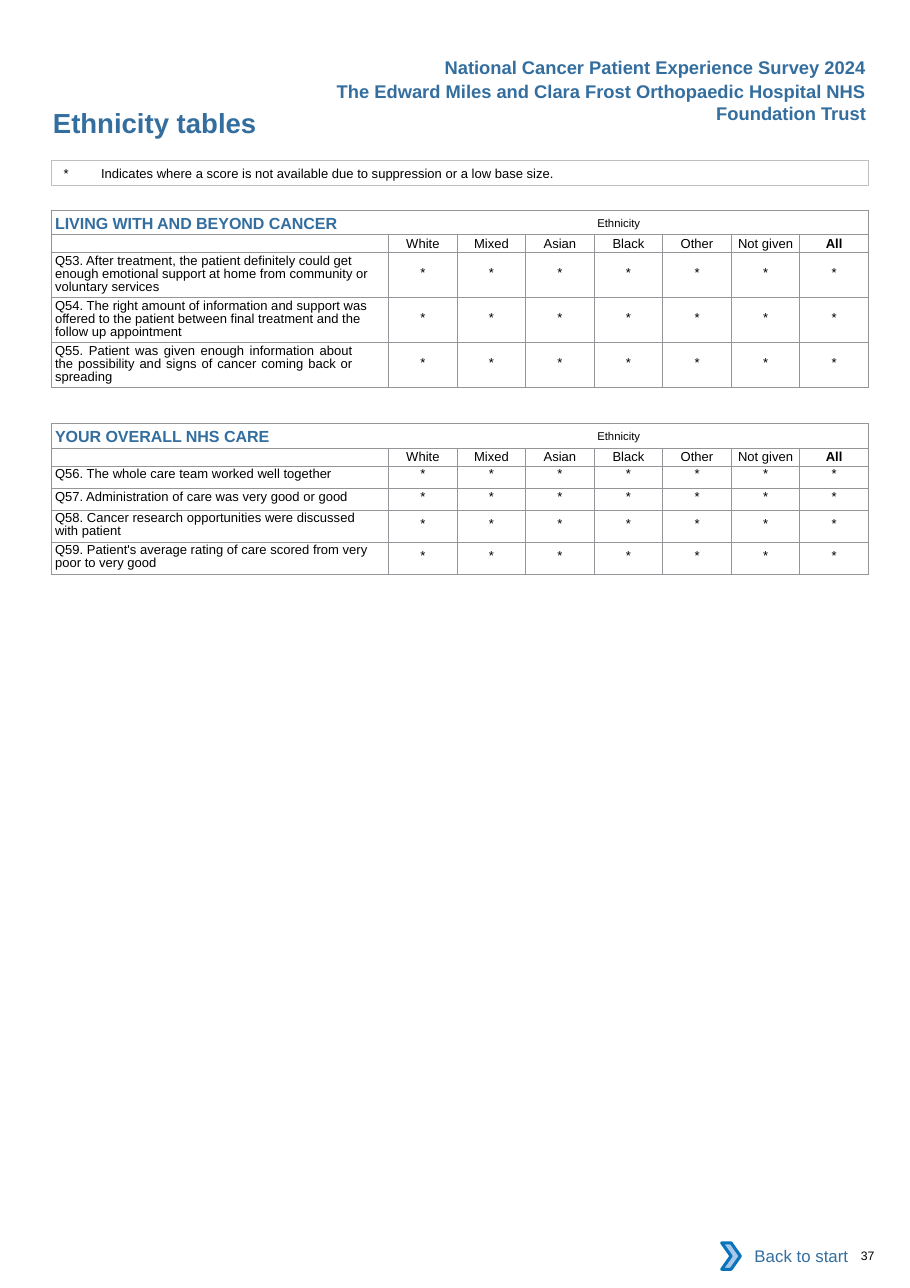
from lxml import etree
from pptx import Presentation
from pptx.dml.color import RGBColor
from pptx.enum import shapes, text
from pptx.oxml import ns
from pptx.util import Cm, Pt

BLUE, BLACK, GRID = "336E9F", "000000", "939598"
ALIGN, ANCHOR = text.PP_ALIGN, text.MSO_ANCHOR


def add_run(p, words, size, color=BLACK, bold=False):
    r = p.add_run()
    r.text = words
    r.font.name, r.font.size, r.font.bold = "Arial", Pt(size), bold
    r.font.color.rgb = RGBColor.from_string(color)
    return r


def set_frame(tf, left=0, top=0, right=0, bottom=0, anchor=ANCHOR.TOP):
    """Set the insets in cm and the anchor of a text frame or table cell."""
    tf.margin_left, tf.margin_top = Cm(left), Cm(top)
    tf.margin_right, tf.margin_bottom = Cm(right), Cm(bottom)
    tf.vertical_anchor = anchor
    tf.word_wrap = True


prs = Presentation()
prs.slide_width, prs.slide_height = Cm(20.98), Cm(29.69)
s = prs.slides.add_slide(prs.slide_layouts[5])

# Page number
sp = s.shapes.add_textbox(Cm(19.6), Cm(28.77), Cm(1.3), Cm(0.34))
set_frame(sp.text_frame, left=0.25)
add_run(sp.text_frame.paragraphs[0], "37", 8)

# Title
title = s.shapes.title
title.left, title.top, title.width, title.height = Cm(1.19), Cm(2.44), Cm(11.43), Cm(0.76)
tf = title.text_frame
set_frame(tf, left=0.03)
tf.auto_size = text.MSO_AUTO_SIZE.NONE
tf.paragraphs[0].alignment = ALIGN.LEFT
add_run(tf.paragraphs[0], "Ethnicity tables", 18, BLUE, True)

# Score tables: top, heading, then (question, row height, star inset, right inset)
GROUPS = ["White", "Mixed", "Asian", "Black", "Other", "Not given", "All"]
TABLES = [
    (4.85, "LIVING WITH AND BEYOND CANCER", [
        ("Q53. After treatment, the patient definitely could get enough emotional "
         "support at home from community or voluntary services", 1.04, 0.3, 0.3),
        ("Q54. The right amount of information and support was offered to the patient "
         "between final treatment and the follow up appointment", 1.04, 0.3, 0.3),
        ("Q55. Patient was given enough information about the possibility and signs of "
         "cancer coming back or spreading", 1.04, 0.3, 0.83),
    ]),
    (9.77, "YOUR OVERALL NHS CARE", [
        ("Q56. The whole care team worked well together", 0.51, 0.03, 0),
        ("Q57. Administration of care was very good or good", 0.51, 0.03, 0),
        ("Q58. Cancer research opportunities were discussed with patient", 0.74, 0.15, 0.7),
        ("Q59. Patient's average rating of care scored from very poor to very good",
         0.74, 0.15, 0.3),
    ]),
]
for top, heading, questions in TABLES:
    heights = [0.56, 0.41] + [q[1] for q in questions]
    frame = s.shapes.add_table(len(heights), len(GROUPS) + 1, Cm(1.19), Cm(top),
                               Cm(18.83), Cm(sum(heights)))
    table = frame.table
    table.first_row = table.horz_banding = False
    for i, column in enumerate(table.columns):
        column.width = Cm(1.58 if i else 7.77)
    for row, height in zip(table.rows, heights):
        row.height = Cm(height)
    table.cell(0, 0).merge(table.cell(0, len(GROUPS)))

    cell = table.cell(0, 0)
    set_frame(cell, left=0.08, anchor=ANCHOR.MIDDLE)
    p = cell.text_frame.paragraphs[0]
    add_run(p, heading + "\t", 10.5, BLUE, True)
    r = add_run(p, "Ethnicity", 12.8)
    r.font._element.set("baseline", "10000")
    tabs = etree.SubElement(p._p.get_or_add_pPr(), ns.qn("a:tabLst"))
    etree.SubElement(tabs, ns.qn("a:tab"), pos=str(Cm(12.5)), algn="l")

    for c, group in enumerate(GROUPS, 1):
        cell = table.cell(1, c)
        set_frame(cell, anchor=ANCHOR.MIDDLE)
        p = cell.text_frame.paragraphs[0]
        p.alignment, p.line_spacing = ALIGN.CENTER, Pt(9.9)
        add_run(p, group, 8.5, bold=group == "All")

    for n, (question, height, star_top, right) in enumerate(questions, 2):
        cell = table.cell(n, 0)
        several_lines = height > 0.6
        set_frame(cell, left=0.08, top=0.05 if several_lines else 0.03, right=right)
        p = cell.text_frame.paragraphs[0]
        if several_lines:
            p.line_spacing = Pt(8.6)
        if question.startswith("Q55"):
            p.alignment = ALIGN.JUSTIFY
        add_run(p, question, 8.5)
        for c in range(1, len(GROUPS) + 1):
            cell = table.cell(n, c)
            set_frame(cell, top=star_top)
            p = cell.text_frame.paragraphs[0]
            p.alignment = ALIGN.CENTER
            add_run(p, "*", 8.5)

    for n, row in enumerate(table.rows):
        for cell in row.cells:
            cell.fill.background()
            if not cell.text_frame.text:
                set_frame(cell)
                etree.SubElement(cell.text_frame.paragraphs[0]._p,
                                 ns.qn("a:endParaRPr"), sz="800")
            for i, side in enumerate(("lnL", "lnR", "lnT", "lnB")):
                width = Pt(0.75 if n == 0 and side == "lnT" else 0.5)
                ln = etree.Element(ns.qn("a:" + side), w=str(width))
                fill = etree.SubElement(ln, ns.qn("a:solidFill"))
                etree.SubElement(fill, ns.qn("a:srgbClr"), val=GRID)
                cell._tc.tcPr.insert(i, ln)

# Note on suppressed scores
note = s.shapes.add_shape(shapes.MSO_SHAPE.RECTANGLE, Cm(1.19), Cm(3.7), Cm(18.83), Cm(0.57))
note.shadow.inherit = False
note.fill.background()
note.line.color.rgb = RGBColor.from_string("BFBFBF")
note.line.width = Pt(0.5)
set_frame(note.text_frame, left=0.28, anchor=ANCHOR.MIDDLE)
p = note.text_frame.paragraphs[0]
p.alignment = ALIGN.LEFT
add_run(p, "*", 8.5)
add_run(p, "\tIndicates where a score is not available due to suppression or a low base size.", 8.5)
tabs = etree.SubElement(p._p.get_or_add_pPr(), ns.qn("a:tabLst"))
etree.SubElement(tabs, ns.qn("a:tab"), pos=str(Cm(0.86)), algn="l")

# Survey and trust names
for left, top, width, height, words, wrap in [
    (9.96, 1.17, 10.26, 0.76, "National Cancer Patient Experience Survey 2024", False),
    (5.64, 1.73, 14.58, 1.27,
     "The Edward Miles and Clara Frost Orthopaedic Hospital NHS Foundation Trust", True),
]:
    sp = s.shapes.add_textbox(Cm(left), Cm(top), Cm(width), Cm(height))
    sp.text_frame.word_wrap = wrap
    p = sp.text_frame.paragraphs[0]
    p.alignment = ALIGN.RIGHT
    add_run(p, words, 12, BLUE, True)

# Back to start button
button = s.shapes.add_group_shape()
label = button.shapes.add_shape(shapes.MSO_SHAPE.RECTANGLE, Cm(16.81), Cm(28.42), Cm(3), Cm(1.07))
chevron = button.shapes.add_shape(shapes.MSO_SHAPE.CHEVRON, Cm(16.64), Cm(28.65), Cm(0.43), Cm(0.61))
for sp, color in ((label, "FFFFFF"), (chevron, "A8C7E9")):
    sp.shadow.inherit = False
    sp.fill.solid()
    sp.fill.fore_color.rgb = RGBColor.from_string(color)
label.line.fill.background()
chevron.line.color.rgb = RGBColor.from_string("0A74BB")
chevron.line.width = Pt(2)
p = label.text_frame.paragraphs[0]
p.alignment = ALIGN.RIGHT
add_run(p, "Back to start", 11, BLUE)

prs.save("out.pptx")
